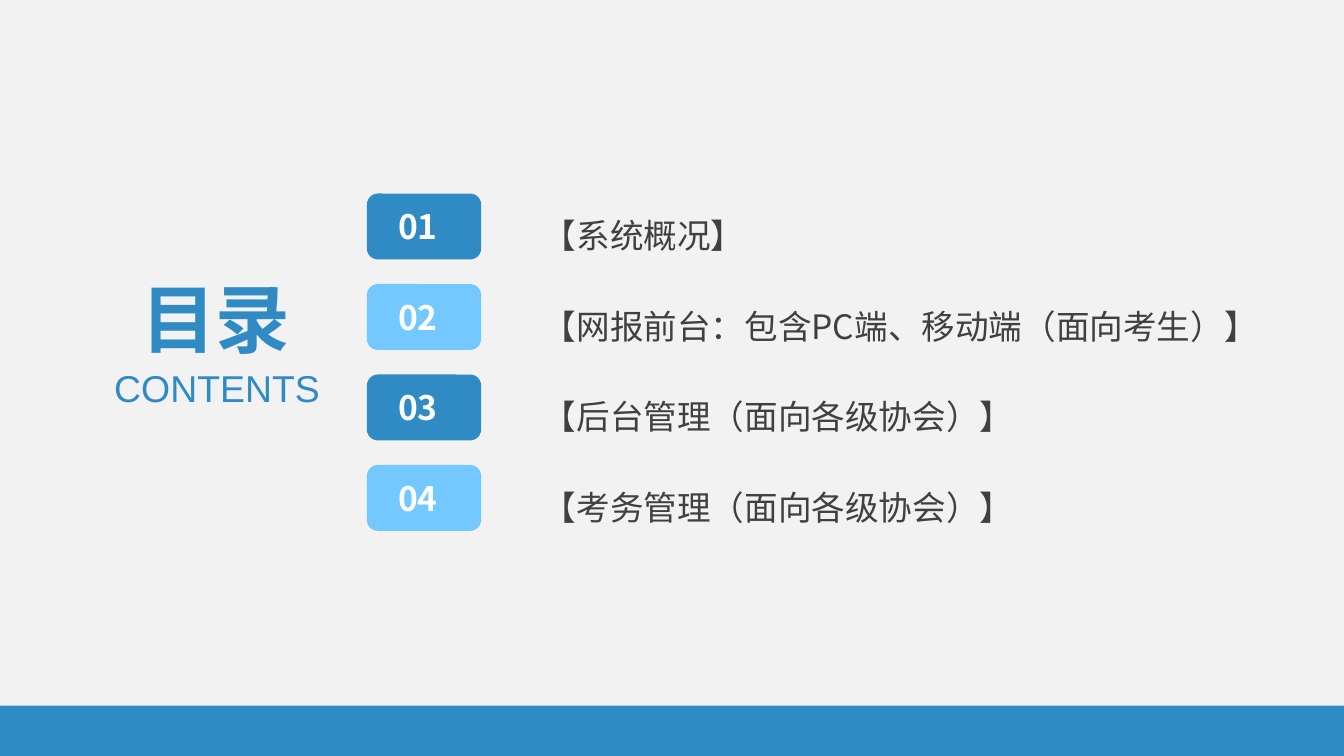
from pptx import Presentation
from pptx.dml.color import RGBColor
from pptx.enum.shapes import MSO_SHAPE
from pptx.enum.text import MSO_ANCHOR, MSO_AUTO_SIZE, PP_ALIGN
from pptx.util import Inches, Pt
from lxml.etree import SubElement
from pptx.oxml.ns import qn

# Content: each entry with the width of its text
ITEMS = [
    ("【系统概况】", 2.84),
    ("【网报前台：包含PC端、移动端（面向考生）】", 6.03),
    ("【后台管理（面向各级协会）】", 3.86),
    ("【考务管理（面向各级协会）】", 4.1),
]
HEAD, SUB = "目录", "CONTENTS"

# Look
HUES = {"back": "F2F2F2", "blue": "308BC4", "sky": "73C8FF",
        "white": "FFFFFF", "text": "404040"}
CJK = "Noto Sans CJK SC"
LOOKS = {
    "head": {"name": "Arial", "size": Pt(40), "bold": True, "hue": "blue"},
    "sub": {"name": "Arial", "size": Pt(20), "bold": False, "hue": "blue"},
    "num": {"name": CJK, "size": Pt(18), "bold": True, "hue": "white"},
    "item": {"name": CJK, "size": Pt(18), "bold": False, "hue": "text"},
}
CENTER = {"alignment": PP_ALIGN.CENTER}
LIST = {"line_spacing": 1.5, "space_before": Pt(5.7)}

# Grid: a 16:9 slide with four equal rows
WIDE = 10
HIGH = WIDE * 9 / 16
FOOT = HIGH / 15
TOP, STEP = 1.4, 2.02 / 3
TILE, TEXT = 2.73, 3.97


def color(key):
    return RGBColor.from_string(HUES[key])


def place(shape, *box):
    for name, size in zip(("left", "top", "width", "height"), box):
        setattr(shape, name, Inches(size))


def block(kind, box, hue=None):
    shape = slide.shapes.add_shape(kind, *map(Inches, box))
    shape.shadow.inherit = False
    shape.line.fill.background()
    if hue:
        shape.fill.solid()
        shape.fill.fore_color.rgb = color(hue)
    else:
        shape.fill.background()
    return shape


def write(shape, text, look, form, pad=(0, 0), anchor=MSO_ANCHOR.MIDDLE):
    frame = shape.text_frame
    side, edge = map(Inches, pad)
    setup = {"margin_left": side, "margin_right": side, "margin_top": edge,
             "margin_bottom": edge, "word_wrap": True,
             "auto_size": MSO_AUTO_SIZE.NONE, "vertical_anchor": anchor}
    for name, value in setup.items():
        setattr(frame, name, value)
    para = frame.paragraphs[0]
    for name, value in form.items():
        setattr(para, name, value)
    run = para.add_run()
    run.text = text
    for name, value in LOOKS[look].items():
        if name == "hue":
            run.font.color.rgb = color(value)
        else:
            setattr(run.font, name, value)
    SubElement(run.font._element, qn("a:ea"), typeface=CJK)
    return para


def plain(para):
    """Drop the bullet and indent of a body placeholder."""
    props = para._p.get_or_add_pPr()
    for name in ("marL", "indent"):
        props.set(name, "0")
    SubElement(props, qn("a:buNone"))


# Slide: a layout with one title and four body placeholders
deck = Presentation()
deck.slide_width, deck.slide_height = Inches(WIDE), Inches(HIGH)
slide = deck.slides.add_slide(deck.slide_layouts[4])
slide.background.fill.solid()
slide.background.fill.fore_color.rgb = color("back")
title, *bodies = slide.placeholders

# Footer band
block(MSO_SHAPE.RECTANGLE, (0, HIGH - FOOT, WIDE, FOOT), "blue")

# Title and subtitle
place(title, 0.98, 2.03, 1.25, 0.67)
write(title, HEAD, "head", CENTER)
sub = slide.shapes.add_textbox(*map(Inches, (0.59, 2.72, 2.05, 0.34)))
write(sub, SUB, "sub", CENTER, anchor=MSO_ANCHOR.TOP)

# Entries: tile, number and text on each row
for row, ((text, width), body) in enumerate(zip(ITEMS, bodies)):
    top = TOP + row * STEP
    block(MSO_SHAPE.ROUNDED_RECTANGLE, (TILE, top + 0.04, 0.85, 0.49),
          ("blue", "sky")[row % 2])
    num = block(MSO_SHAPE.OVAL, (TILE - 0.01, top, 0.78, 0.57))
    write(num, f"{row + 1:02}", "num", CENTER, (0.06, 0.03))
    place(body, TEXT, top + 0.01, width, 0.48)
    plain(write(body, text, "item", LIST, (0.07, 0.04), MSO_ANCHOR.TOP))

deck.save("out.pptx")
